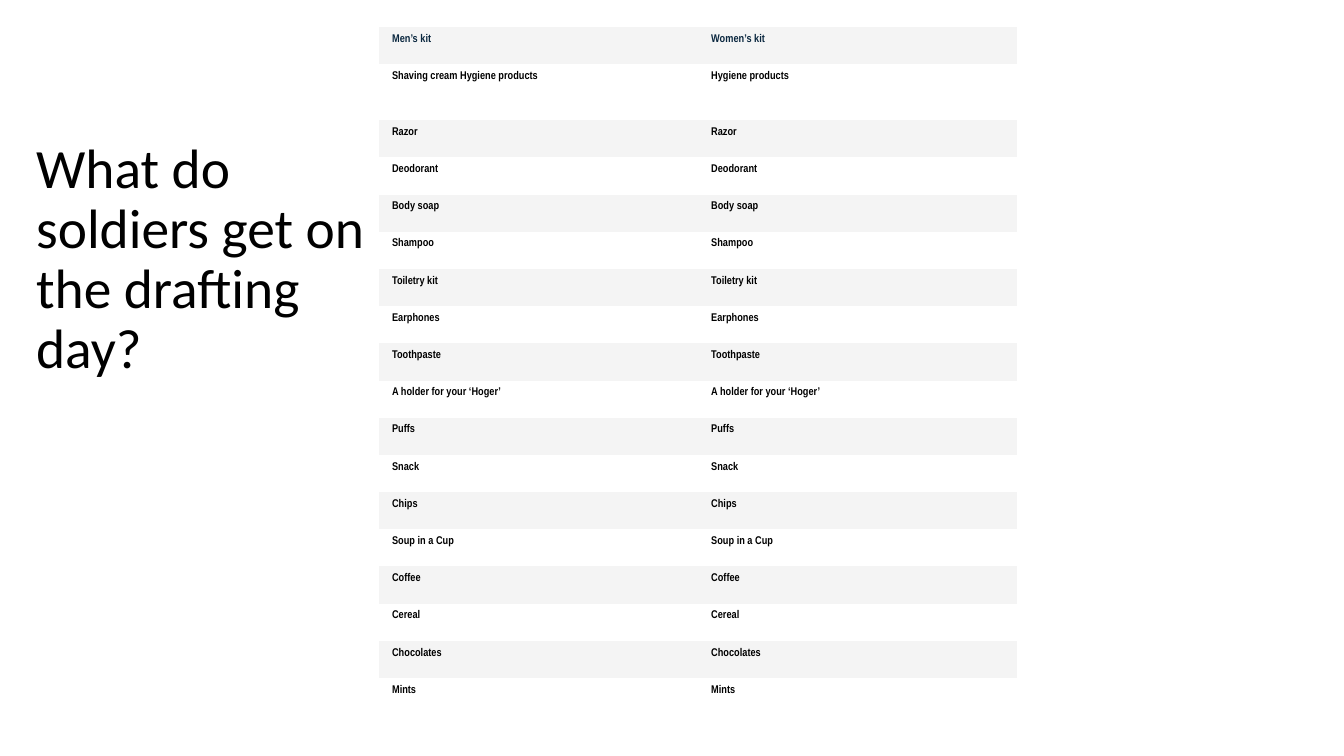
"""Build a slide listing the kit soldiers get on drafting day."""
from dataclasses import dataclass

from pptx import Presentation
from pptx.dml.color import RGBColor
from pptx.enum.text import MSO_ANCHOR, MSO_AUTO_SIZE
from pptx.util import Inches, Pt

MIDDLE = MSO_ANCHOR.MIDDLE
FIXED = MSO_AUTO_SIZE.NONE

TITLE = "What do soldiers get on the drafting day?"
HEAD = ("Men’s kit", "Women’s kit")
FIRST = ("Shaving cream Hygiene products", "Hygiene products")
SHARED = (
    "Razor", "Deodorant", "Body soap", "Shampoo", "Toiletry kit",
    "Earphones", "Toothpaste", "A holder for your ‘Hoger’", "Puffs",
    "Snack", "Chips", "Soup in a Cup", "Coffee", "Cereal",
    "Chocolates", "Mints",
)
ROWS = [HEAD, FIRST] + [(item, item) for item in SHARED]

WIDTH, HEIGHT = Inches(13.33), Inches(7.5)
TITLE_BOX = (1.95, 24.8, 26.26, 19.33)
KIT_BOX = (28.2, 3.6, 47.49, 91.07)
TALL_ROW = 1.5
INSETS = (0.13, 0.07, 0.04, 0.07)
PLAIN_GRID = "{2D5ABB26-0587-4C30-8999-92F81FD0307C}"


@dataclass(frozen=True)
class Theme:
    """Colours, fonts and type sizes."""
    ink: str = "000000"
    head: str = "0A273F"
    bands: tuple = ("F4F4F4", "FFFFFF")
    title_font: str = "Calibri"
    cell_font: str = "Arial Narrow"
    title_size: float = 39.6
    cell_size: float = 8


THEME = Theme()


def place(box):
    """Turn percentages of the slide into lengths."""
    sides = (WIDTH, HEIGHT, WIDTH, HEIGHT)
    return [round(side * share / 100) for side, share in zip(sides, box)]


def write(frame, text, font, size, color, bold=False):
    """Set one line of styled text and return its paragraph."""
    frame.text = text
    para = frame.paragraphs[0]
    style = para.runs[0].font
    style.name, style.size, style.bold = font, Pt(size), bold
    style.color.rgb = RGBColor.from_string(color)
    return para


def add_title(slide):
    """Add the question on the left."""
    frame = slide.shapes.add_textbox(*place(TITLE_BOX)).text_frame
    frame.word_wrap = True
    frame.auto_size = FIXED
    frame.vertical_anchor = MIDDLE
    para = write(frame, TITLE, THEME.title_font, THEME.title_size, THEME.ink)
    para.line_spacing = 0.9


def fill_cell(cell, text, row):
    """Write one kit item on its band."""
    (cell.margin_left, cell.margin_top,
     cell.margin_right, cell.margin_bottom) = map(Inches, INSETS)
    cell.fill.solid()
    band = THEME.bands[row % len(THEME.bands)]
    cell.fill.fore_color.rgb = RGBColor.from_string(band)
    color = THEME.ink if row else THEME.head
    write(cell.text_frame, text, THEME.cell_font, THEME.cell_size, color, True)


def add_kit(slide):
    """Add the table of items."""
    box = place(KIT_BOX)
    holder = slide.shapes.add_table(len(ROWS), len(HEAD), *box)
    for style in holder.element.iter("{*}tableStyleId"):
        style.text = PLAIN_GRID
    table = holder.table
    unit = box[3] / (len(ROWS) - 1 + TALL_ROW)
    for row, texts in enumerate(ROWS):
        share = TALL_ROW if texts == FIRST else 1
        table.rows[row].height = round(unit * share)
        for col, text in enumerate(texts):
            fill_cell(table.cell(row, col), text, row)


def main():
    """Make and save the deck."""
    deck = Presentation()
    deck.slide_width, deck.slide_height = WIDTH, HEIGHT
    slide = deck.slides.add_slide(deck.slide_layouts[6])
    add_title(slide)
    add_kit(slide)
    deck.save("out.pptx")


if __name__ == "__main__":
    main()
